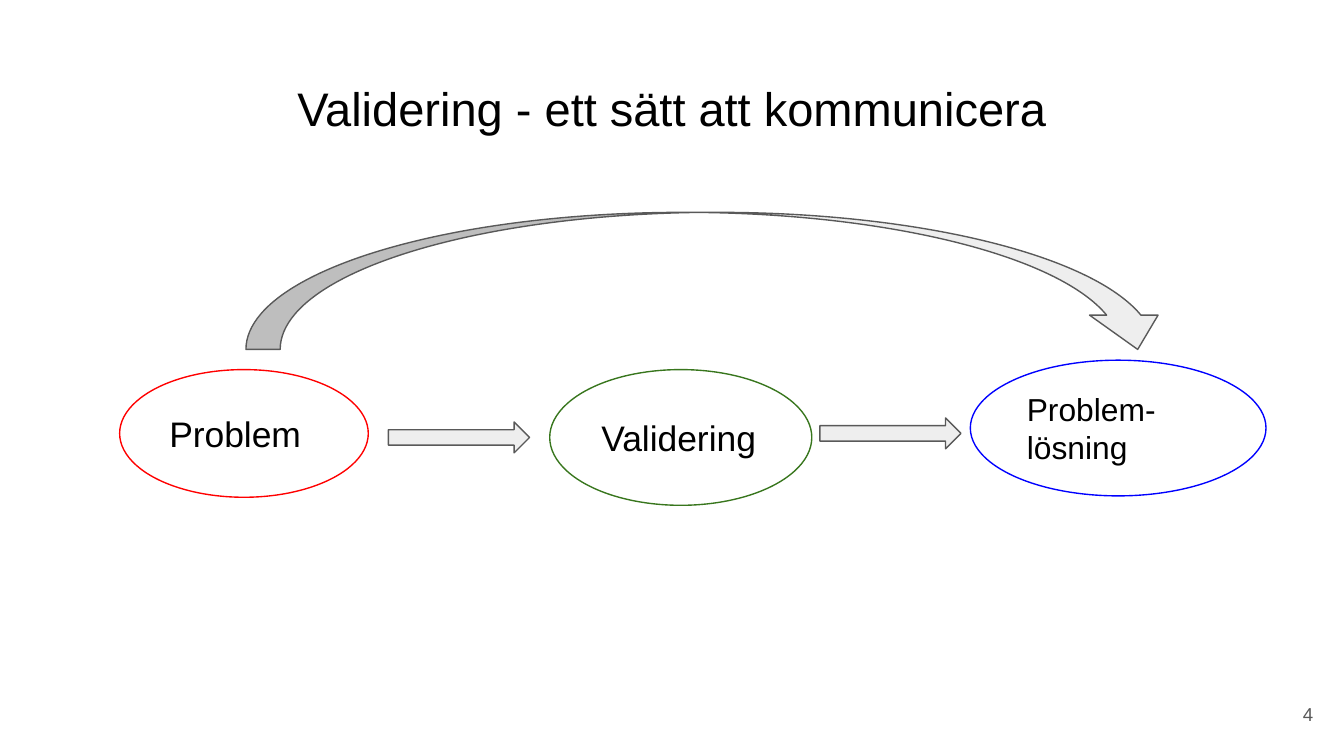
from dataclasses import dataclass

from pptx import Presentation
from pptx.dml.color import RGBColor as RGB
from pptx.enum.shapes import MSO_SHAPE as Shape
from pptx.enum.text import MSO_ANCHOR as Anchor, MSO_AUTO_SIZE as AutoSize, PP_ALIGN as Align
from pptx.util import Inches, Pt


@dataclass(frozen=True)
class Theme:
    """Colours, font and type sizes of the deck."""
    font: str = "Arial"
    ink: str = "000000"
    paper: str = "FFFFFF"
    grey: str = "595959"
    arrow: str = "EEEEEE"
    problem: str = "FF0000"
    validation: str = "38761D"
    solution: str = "0000FF"
    title_size: float = 25.2
    step_size: float = 19
    solution_size: float = 17
    number_size: float = 10
    line: float = 0.75
    inset: float = 0.1


THEME = Theme()


def place(item, box):
    """Move an item to a box of left, top, width and height in inches."""
    item.left, item.top, item.width, item.height = map(Inches, box)


def write(item, lines, size, color=THEME.ink, align=Align.LEFT, anchor=Anchor.MIDDLE):
    """Fill an item with one paragraph for each line."""
    frame = item.text_frame
    frame.word_wrap = True
    frame.auto_size = AutoSize.NONE
    frame.vertical_anchor = anchor
    frame.margin_left = frame.margin_right = Inches(THEME.inset)
    frame.margin_top = frame.margin_bottom = Inches(THEME.inset)
    frame.text = "\n".join(lines)
    for para in frame.paragraphs:
        para.alignment = align
        para.font.name = THEME.font
        para.font.size = Pt(size)
        para.font.color.rgb = RGB.from_string(color)


def add_outlined(page, kind, box, fill, line):
    """Add a flat preset shape with a thin outline."""
    shape = page.shapes.add_shape(kind, *map(Inches, box))
    shape.shadow.inherit = False
    shape.fill.solid()
    shape.fill.fore_color.rgb = RGB.from_string(fill)
    shape.line.color.rgb = RGB.from_string(line)
    shape.line.width = Pt(THEME.line)
    return shape


def add_title(page, box, text):
    """Place the centred slide title."""
    title = page.shapes.title
    place(title, box)
    write(title, [text], THEME.title_size, align=Align.CENTER, anchor=Anchor.TOP)


def add_flow(page, box):
    """Draw three steps, the arrows between them and the arc above."""
    left, top = box[:2]
    steps = (
        (0, 1.17, 1.85, 0.95, THEME.problem, ["Problem"], THEME.step_size),
        (3.2, 1.17, 1.95, 1.01, THEME.validation, ["Validering"], THEME.step_size),
        (6.33, 1.1, 2.2, 1.01, THEME.solution, ["Problem-", "lösning"], THEME.solution_size),
    )
    for x, y, wide, high, color, lines, size in steps:
        step = add_outlined(page, Shape.OVAL, (left + x, top + y, wide, high), THEME.paper, color)
        write(step, lines, size)

    arrows = (
        (Shape.RIGHT_ARROW, 2, 1.56, 1.05, 0.23),
        (Shape.RIGHT_ARROW, 5.21, 1.53, 1.05, 0.23),
        (Shape.CURVED_DOWN_ARROW, 0.94, 0, 6.89, 1.02),
    )
    for kind, x, y, wide, high in arrows:
        add_outlined(page, kind, (left + x, top + y, wide, high), THEME.arrow, THEME.grey)


def add_page_number(page, box, number):
    """Write the page number in the corner."""
    label = page.shapes.add_textbox(*map(Inches, box))
    write(label, [str(number)], THEME.number_size, THEME.grey, Align.RIGHT)


def main():
    """Build and save the deck."""
    deck = Presentation()
    deck.slide_width, deck.slide_height = Inches(10), Inches(10 * 9 / 16)
    page = deck.slides.add_slide(deck.slide_layouts.get_by_name("Title Only"))
    page.background.fill.solid()
    page.background.fill.fore_color.rgb = RGB.from_string(THEME.paper)
    add_title(page, (0.34, 0.49, 9.32, 0.63), "Validering - ett sätt att kommunicera")
    add_flow(page, (0.89, 1.58, 8.53, 2.18))
    add_page_number(page, (9.27, 5.1, 0.6, 0.43), 4)
    deck.save("out.pptx")


if __name__ == "__main__":
    main()
